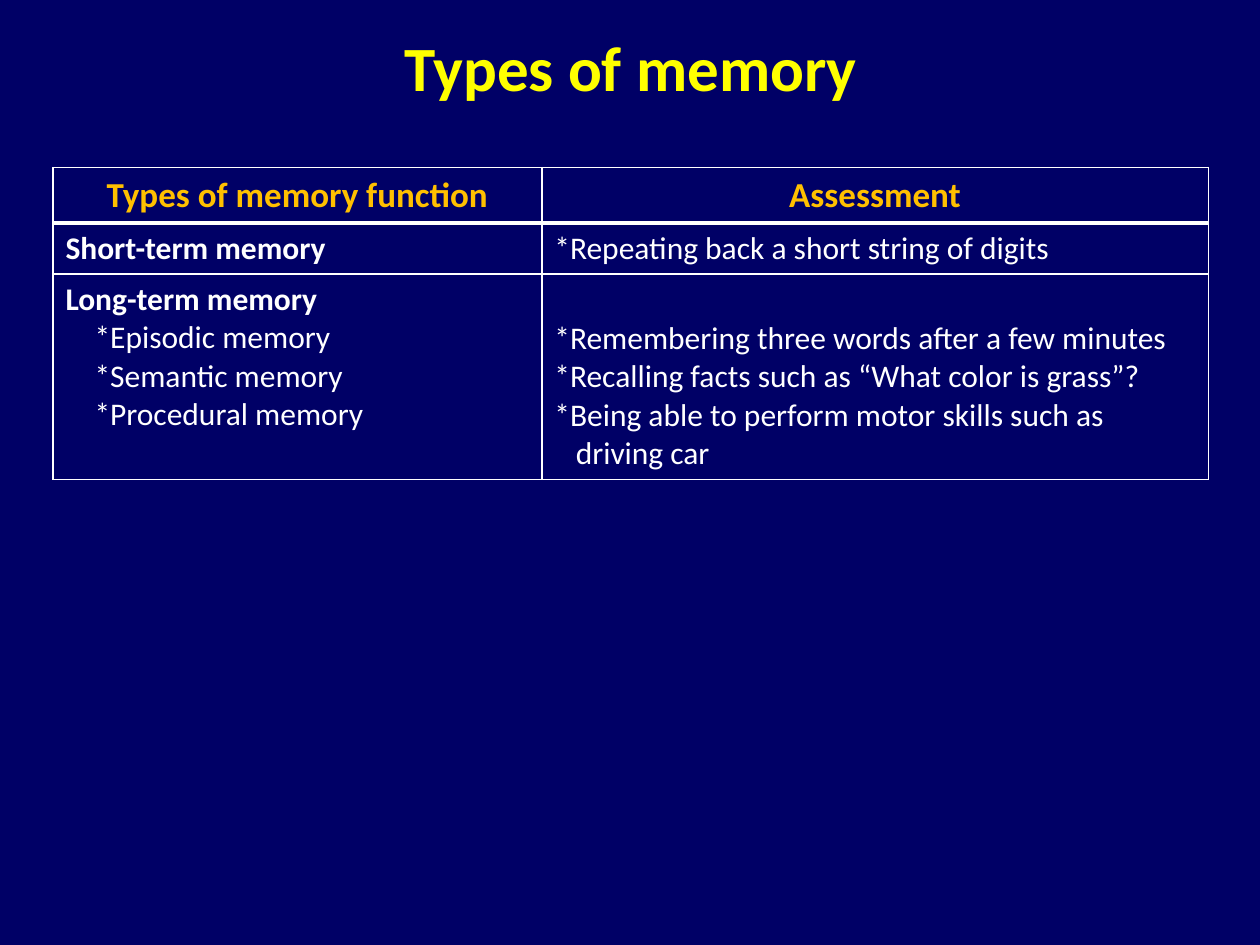
"""Build a slide with a table of memory types and how each is assessed."""
from pptx import Presentation
from pptx.dml.color import RGBColor
from pptx.enum.text import MSO_ANCHOR as Anchor, PP_ALIGN as Align
from pptx.oxml import parse_xml
from pptx.oxml.ns import nsdecls
from pptx.util import Inches, Pt

NAVY = RGBColor(0x00, 0x00, 0x66)
YELLOW = RGBColor(0xFF, 0xFF, 0x00)
GOLD = RGBColor(0xFF, 0xC0, 0x00)
WHITE = RGBColor(0xFF, 0xFF, 0xFF)

TITLE = "Types of memory"
TITLE_FORMAT = {"name": "Calibri", "size": Pt(36), "bold": True}
HEADER_FORMAT = {"name": "Calibri", "size": Pt(20), "bold": True}
LABEL_FORMAT = {"name": "Calibri", "size": Pt(18), "bold": True}
BODY_FORMAT = {"name": "Calibri", "size": Pt(18), "bold": False}

ITEM_INDENT = 0.23
WRAP_INDENT = 0.17
TABLE_LEFT, TABLE_TOP = 0.42, 1.33
COLUMN_WIDTHS = [3.88, 5.29]
ROW_HEIGHTS = [0.43, 0.4, 1.6]
CELL_TOP_MARGIN = 0.05
LINE_HEIGHT = 0.31
THIN, THICK = Pt(1), Pt(3)

HEADERS = ["Types of memory function", "Assessment"]
ROWS = [
    (
        [("Short-term memory", LABEL_FORMAT, 0)],
        [("*Repeating back a short string of digits", BODY_FORMAT, 0)],
    ),
    (
        [
            ("Long-term memory", LABEL_FORMAT, 0),
            ("*Episodic memory", BODY_FORMAT, ITEM_INDENT),
            ("*Semantic memory", BODY_FORMAT, ITEM_INDENT),
            ("*Procedural memory", BODY_FORMAT, ITEM_INDENT),
        ],
        [
            ("*Remembering three words after a few minutes", BODY_FORMAT, 0),
            ("*Recalling facts such as “What color is grass”?", BODY_FORMAT, 0),
            ("*Being able to perform motor skills such as", BODY_FORMAT, 0),
            ("driving car", BODY_FORMAT, WRAP_INDENT),
        ],
    ),
]


def write_paragraph(paragraph, text, font_format, color, align, indent=0):
    paragraph.alignment = align
    if indent:
        paragraph._p.get_or_add_pPr().set("marL", str(Inches(indent)))
    run = paragraph.add_run()
    run.text = text
    for name, value in font_format.items():
        setattr(run.font, name, value)
    run.font.color.rgb = color


def write_cell(cell, lines, color, align):
    for index, (text, font_format, indent) in enumerate(lines):
        frame = cell.text_frame
        paragraph = frame.add_paragraph() if index else frame.paragraphs[0]
        write_paragraph(paragraph, text, font_format, color, align, indent)


def style_cell(cell, top, bottom):
    properties = cell._tc.get_or_add_tcPr()
    for side, width in {"L": THIN, "R": THIN, "T": top, "B": bottom}.items():
        properties.append(parse_xml(
            f'<a:ln{side} {nsdecls("a")} w="{width}"><a:solidFill>'
            f'<a:srgbClr val="{WHITE}"/></a:solidFill></a:ln{side}>'
        ))
    cell.fill.background()


def add_title(slide):
    title = slide.shapes.title
    title.left, title.top = Inches(0.67), Inches(0.17)
    title.width, title.height = Inches(8.67), Inches(0.71)
    title.text_frame.vertical_anchor = Anchor.MIDDLE
    write_paragraph(title.text_frame.paragraphs[0], TITLE, TITLE_FORMAT, YELLOW, Align.CENTER)


def add_memory_table(slide):
    table = slide.shapes.add_table(
        len(ROW_HEIGHTS), len(COLUMN_WIDTHS), Inches(TABLE_LEFT), Inches(TABLE_TOP),
        Inches(sum(COLUMN_WIDTHS)), Inches(sum(ROW_HEIGHTS)),
    ).table
    for column, width in zip(table.columns, COLUMN_WIDTHS):
        column.width = Inches(width)
    for row, height in zip(table.rows, ROW_HEIGHTS):
        row.height = Inches(height)

    header_row = [[(text, HEADER_FORMAT, 0)] for text in HEADERS]
    for row_index, row_lines in enumerate([header_row, *ROWS]):
        is_header = row_index == 0
        color = GOLD if is_header else WHITE
        align = Align.CENTER if is_header else Align.LEFT
        top = THICK if row_index == 1 else THIN
        bottom = THICK if is_header else THIN
        for column_index, lines in enumerate(row_lines):
            cell = table.cell(row_index, column_index)
            write_cell(cell, lines, color, align)
            style_cell(cell, top, bottom)
    table.cell(2, 1).margin_top = Inches(CELL_TOP_MARGIN + LINE_HEIGHT)


def main():
    presentation = Presentation()
    presentation.slide_width, presentation.slide_height = Inches(10), Inches(7.5)
    slide = presentation.slides.add_slide(presentation.slide_layouts[5])
    slide.background.fill.solid()
    slide.background.fill.fore_color.rgb = NAVY
    add_title(slide)
    add_memory_table(slide)
    presentation.save("out.pptx")


if __name__ == "__main__":
    main()
